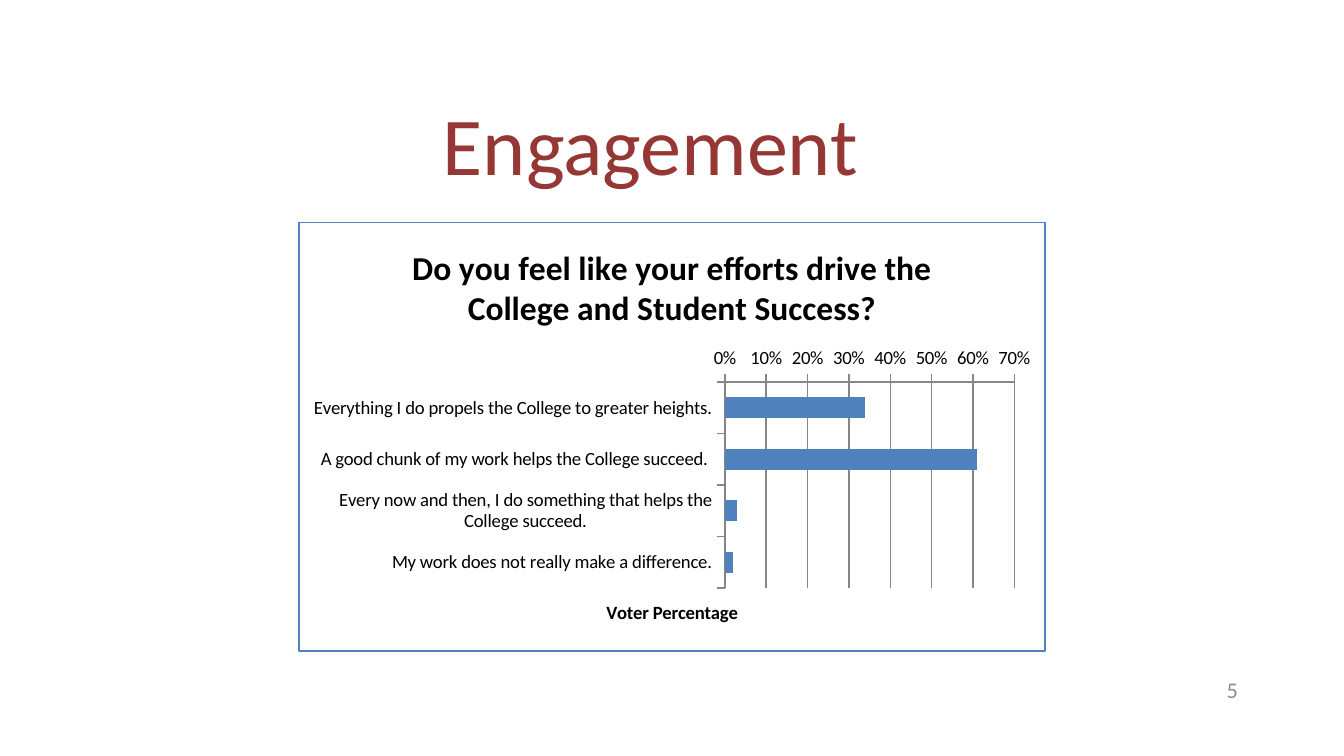
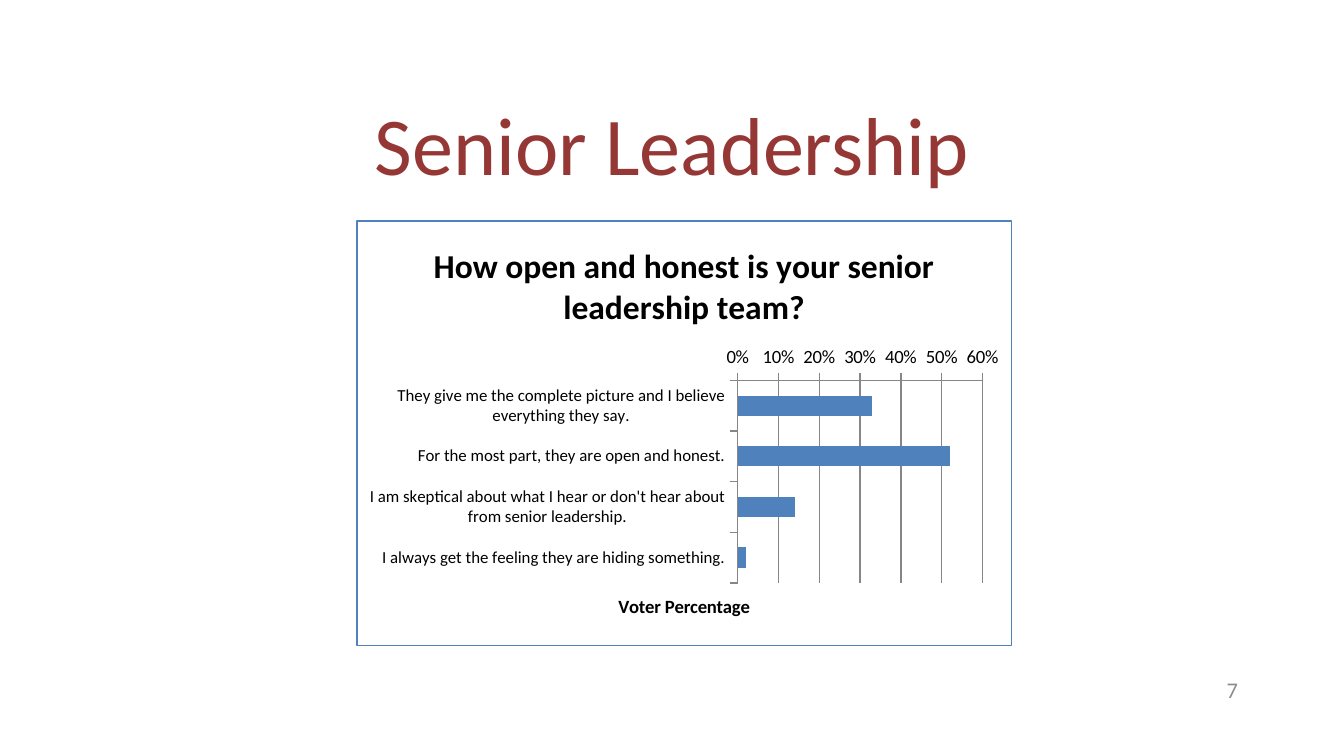
from pptx import Presentation, util as u
from pptx.chart import data
from pptx.dml.color import RGBColor
from pptx.enum import chart as ch, text
from pptx.oxml import parse_xml
from pptx.oxml.ns import nsdecls

# Content
SLIDES = [
    dict(title="Engagement", left=0.53, page="5",
         ask="Do you feel like your efforts drive the College and Student Success?",
         box=(2.22, 1.65, 5.56, 3.2), size=10, top=0.7,
         votes=[("Everything I do propels the College to greater heights.", 0.34),
                ("A good chunk of my work helps the College succeed. ", 0.61),
                ("Every now and then, I do something that helps the College succeed.", 0.03),
                ("My work does not really make a difference.", 0.02)]),
    dict(title="Senior Leadership", left=0.69, page="7",
         ask="How open and honest is your senior leadership team?",
         box=(2.65, 1.64, 4.88, 3.17), size=9, top=0.6,
         votes=[("They give me the complete picture and I believe everything they say.", 0.33),
                ("For the most part, they are open and honest.", 0.52),
                ("I am skeptical about what I hear or don't hear about from senior leadership.", 0.14),
                ("I always get the feeling they are hiding something.", 0.02)]),
]

# Shared style
FACE = "Calibri"
RED, BLUE, GREY, RULE, BLACK = "953735", "4F81BD", "8C8C8C", "868686", "000000"


def color(code):
    return RGBColor.from_string(code)


def style(font, size, tint=BLACK, bold=False):
    font.name, font.size, font.bold = FACE, u.Pt(size), bold
    font.color.rgb = color(tint)


def write(slide, words, box, size, tint, align, space=None):
    frame = slide.shapes.add_textbox(*map(u.Inches, box)).text_frame
    frame.word_wrap = True
    frame.vertical_anchor = text.MSO_ANCHOR.MIDDLE
    para = frame.paragraphs[0]
    para.alignment, para.line_spacing = align, space
    run = para.add_run()
    run.text = words
    style(run.font, size, tint)


def label(owner, words, size):
    frame = owner.text_frame
    frame.text = words
    style(frame.paragraphs[0].runs[0].font, size, bold=True)


def border(chart, tint, width):
    # The frame goes just before the chart's text properties
    chart.element.find("{*}txPr").addprevious(parse_xml(
        f'<c:spPr {nsdecls("c", "a")}><a:ln w="{u.Pt(width)}"><a:solidFill>'
        f'<a:srgbClr val="{tint}"/></a:solidFill></a:ln></c:spPr>'))


def poll(slide, ask, votes, box, size, top):
    names, shares = zip(*votes)
    table = data.CategoryChartData(number_format="0%")
    table.categories = names
    table.add_series("Series 1", shares)
    chart = slide.shapes.add_chart(ch.XL_CHART_TYPE.BAR_CLUSTERED,
                                   *map(u.Inches, box), table).chart
    style(chart.font, 10)
    border(chart, BLUE, 0.75)
    chart.has_legend = False
    chart.has_title = True
    label(chart.chart_title, ask, 18)
    chart.chart_title.include_in_layout = False

    # Bars
    plot = chart.plots[0]
    plot.gap_width, plot.vary_by_categories = 150, False
    fill = plot.series[0].format.fill
    fill.solid()
    fill.fore_color.rgb = color(BLUE)

    # Axes
    cat, val = chart.category_axis, chart.value_axis
    cat.reverse_order = True
    val.minimum_scale, val.maximum_scale, val.major_unit = 0, top, 0.1
    val.has_major_gridlines = True
    val.tick_labels.number_format = "0%"
    val.tick_labels.number_format_is_linked = False
    label(val.axis_title, "Voter Percentage", 10)
    for axis, points in ((cat, size), (val, 10)):
        axis.major_tick_mark = ch.XL_TICK_MARK.OUTSIDE
        axis.minor_tick_mark = ch.XL_TICK_MARK.NONE
        style(axis.tick_labels.font, points)
    for part in (cat, val, val.major_gridlines):
        part.format.line.color.rgb = color(RULE)


def main():
    deck = Presentation()
    deck.slide_width = u.Inches(10)
    deck.slide_height = deck.slide_width * 9 // 16
    for item in SLIDES:
        slide = deck.slides.add_slide(deck.slide_layouts[6])
        write(slide, item["title"], (item["left"], 0.56, 8.62, 1.09), 44, RED,
              text.PP_ALIGN.CENTER, 0.9)
        poll(slide, item["ask"], item["votes"], item["box"], item["size"], item["top"])
        write(slide, item["page"], (7.06, 4.98, 2.25, 0.3), 12, GREY,
              text.PP_ALIGN.RIGHT)
    deck.save("out.pptx")


if __name__ == "__main__":
    main()
